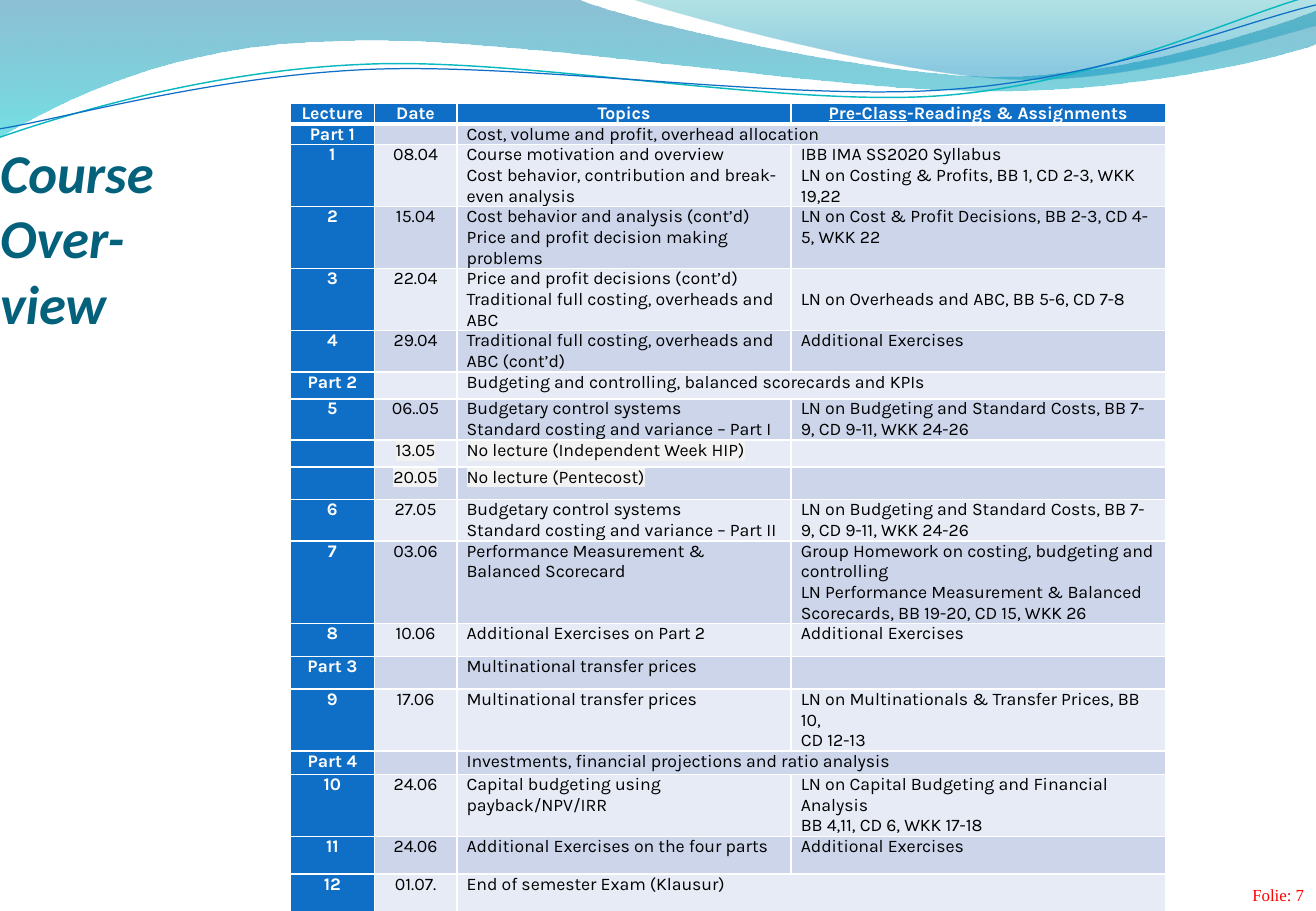
from lxml.etree import SubElement
from pptx import Presentation
from pptx.dml.color import RGBColor
from pptx.enum.text import MSO_ANCHOR, MSO_AUTO_SIZE, PP_ALIGN
from pptx.oxml.ns import qn
from pptx.util import Emu, Inches, Pt

BLUE, WHITE, BLACK = "0F6FC6", "FFFFFF", "000000"
BANDS = ("E7EBF5", "CCD5EA")
NO_LECTURE = "F2F2F2"
COLUMN_WIDTHS = (0.69, 0.68, 2.75, 3.08)

# Row height in inches, then lecture, date, topics, readings
SCHEDULE = [
    (0.17, "Lecture", "Date", "Topics", "Pre-Class-Readings & Assignments"),
    (0.17, "Part 1", "", "Cost, volume and profit, overhead allocation", None),
    (0.51, "1", "08.04", "Course motivation and overview\nCost behavior, contribution and break-even analysis",
     "IBB IMA SS2020 Syllabus\nLN on Costing & Profits, BB 1, CD 2-3, WKK 19,22"),
    (0.51, "2", "15.04", "Cost behavior and analysis (cont’d)\nPrice and profit decision making problems",
     "LN on Cost & Profit Decisions, BB 2-3, CD 4-5, WKK 22"),
    (0.51, "3", "22.04", "Price and profit decisions (cont’d)\nTraditional full costing, overheads and ABC",
     "LN on Overheads and ABC, BB 5-6, CD 7-8"),
    (0.34, "4", "29.04", "Traditional full costing, overheads and ABC (cont’d)", "Additional Exercises"),
    (0.22, "Part 2", "", "Budgeting and controlling, balanced scorecards and KPIs", None),
    (0.34, "5", "06..05", "Budgetary control systems\nStandard costing and variance – Part I",
     "LN on Budgeting and Standard Costs, BB 7-9, CD 9-11, WKK 24-26"),
    (0.22, "", "13.05", "No lecture (Independent Week HIP)", ""),
    (0.27, "", "20.05", "No lecture (Pentecost)", ""),
    (0.34, "6", "27.05", "Budgetary control systems\nStandard costing and variance – Part II",
     "LN on Budgeting and Standard Costs, BB 7-9, CD 9-11, WKK 24-26"),
    (0.68, "7", "03.06", "Performance Measurement & Balanced Scorecard",
     "Group Homework on costing, budgeting and controlling\n"
     "LN Performance Measurement & Balanced Scorecards, BB 19-20, CD 15, WKK 26"),
    (0.27, "8", "10.06", "Additional Exercises on Part 2", "Additional Exercises"),
    (0.27, "Part 3", "", "Multinational transfer prices", ""),
    (0.51, "9", "17.06", "Multinational transfer prices",
     "LN on Multinationals & Transfer Prices, BB 10,\nCD 12-13"),
    (0.19, "Part 4", "", "Investments, financial projections and ratio analysis", None),
    (0.51, "10", "24.06", "Capital budgeting using payback/NPV/IRR",
     "LN on Capital Budgeting and Financial Analysis\nBB 4,11, CD 6, WKK 17-18"),
    (0.31, "11", "24.06", "Additional Exercises on the four parts", "Additional Exercises"),
    (0.31, "12", "01.07.", "End of semester Exam (Klausur)", None),
]

# Wave outlines: start point, then cubic curves (6 numbers) or straight lines (2)
UPPER_WAVE = [(0, 0), (4.77, 0), (5.15, 0.17, 7.19, 0.63, 8.22, 0.63), (9.24, 0.63, 10.38, 0.26, 10.83, 0.09),
              (10.84, 0.36), (10.65, 0.44, 9.42, 0.76, 8.08, 0.75), (6.74, 0.75, 4.14, 0.28, 2.79, 0.34),
              (1.4, 0.36, 0.5, 0.83, -0.01, 1.13)]
RIGHT_WAVE = [(5.19, -0.01), (5.52, 0.11, 7.39, 0.62, 8.33, 0.65), (9.27, 0.69, 10.42, 0.32, 10.83, 0.21),
              (10.83, 0)]
TEAL_CURVE = [(0, 1.13), (0.52, 0.95, 1.71, 0.58, 3, 0.53), (4.28, 0.47, 6.42, 0.88, 7.72, 0.79),
              (9.02, 0.7, 10.17, 0.13, 10.81, -0.04)]
BLUE_CURVE = [(0, 1.06), (0.51, 0.98, 1.77, 0.62, 3.07, 0.57), (4.36, 0.52, 6.47, 0.83, 7.76, 0.74),
              (9.06, 0.66, 10.2, 0.19, 10.83, 0.04)]


def rgb(value):
    return RGBColor.from_string(value)


def set_font(font, name, size, color, bold=False, italic=False):
    font.name, font.size, font.bold, font.italic = name, Pt(size), bold, italic
    font.color.rgb = rgb(color)


def add_outline(slide, left, top, outline, closed):
    points = [(left + Inches(part[i]), top + Inches(part[i + 1]))
              for part in outline for i in range(0, len(part), 2)]
    builder = slide.shapes.build_freeform(*points[0])
    builder.add_line_segments(points[1:], close=closed)
    shape = builder.convert_to_shape()
    shape.shadow.inherit = False
    # Join each three segments of a curve into one cubic segment
    segments = iter(list(shape._element.iter(qn("a:lnTo"))))
    for part in outline[1:]:
        first = next(segments)
        if len(part) == 6:
            first.tag = qn("a:cubicBezTo")
            for segment in (next(segments), next(segments)):
                first.append(segment[0])
                segment.getparent().remove(segment)
    return shape


def add_waves(slide, left, top):
    # Translucent gradient bands
    for outline, stops in ((UPPER_WAVE, ((0, "0074A1", 45), (1, "00C6CF", 55))),
                           (RIGHT_WAVE, ((0, "00A1A9", 30), (0.8, "008BBF", 45)))):
        band = add_outline(slide, left, top, outline, True)
        band.line.fill.background()
        band.fill.gradient()
        band.fill.gradient_angle = 270
        for stop, (position, color, _) in zip(band.fill.gradient_stops, stops):
            stop.position = position
            stop.color.rgb = rgb(color)
        for tint, (_, _, opacity) in zip(band._element.spPr.iter(qn("a:srgbClr")), stops):
            SubElement(tint, qn("a:alpha"), val=str(opacity * 1000))
    # Thin curves
    for outline, color, width in ((TEAL_CURVE, "0AB8BF", 0.85), (BLUE_CURVE, BLUE, 0.75)):
        curve = add_outline(slide, left, top, outline, False)
        curve.fill.background()
        curve.line.color.rgb = rgb(color)
        curve.line.width = Pt(width)


def add_title(slide, left, top, width, height):
    title = slide.shapes.title
    title.left, title.top, title.width, title.height = left, top, width, height
    frame = title.text_frame
    frame.auto_size = MSO_AUTO_SIZE.NONE
    frame.vertical_anchor = MSO_ANCHOR.BOTTOM
    frame.margin_left = frame.margin_right = frame.margin_bottom = 0
    heading = frame.paragraphs[0]
    heading.text = "Course\nOver-\nview"
    heading.alignment = PP_ALIGN.LEFT
    set_font(heading.font, "Calibri", 32.4, "04617B", bold=True, italic=True)


def add_borders(cell, row):
    widths = {"lnL": 1, "lnR": 1, "lnT": 3 if row == 1 else 1, "lnB": 3 if row == 0 else 1}
    for side, width in widths.items():
        border = SubElement(cell._tc.get_or_add_tcPr(), qn(f"a:{side}"), w=str(Pt(width)))
        SubElement(SubElement(border, qn("a:solidFill")), qn("a:srgbClr"), val=WHITE)


def fill_cell(cell, row, column, text, highlighted):
    strong = row == 0 or column == 0
    cell.margin_left = cell.margin_right = Inches(0.08)
    cell.margin_top = cell.margin_bottom = 0
    add_borders(cell, row)
    cell.fill.solid()
    cell.fill.fore_color.rgb = rgb(BLUE if strong else BANDS[row % 2])
    cell.text = text or ""
    for paragraph in cell.text_frame.paragraphs:
        paragraph.alignment = PP_ALIGN.CENTER if row == 0 or column < 2 else PP_ALIGN.LEFT
        set_font(paragraph.font, "Karla", 10.5, WHITE if strong else BLACK, bold=strong)
        if not text:
            SubElement(paragraph._p, qn("a:endParaRPr"), sz="1050")
        for run in paragraph.runs if highlighted else ():
            highlight = SubElement(run._r.get_or_add_rPr(), qn("a:highlight"))
            SubElement(highlight, qn("a:srgbClr"), val=NO_LECTURE)


def add_schedule(slide, left, top):
    width = Inches(sum(COLUMN_WIDTHS))
    height = Inches(sum(entry[0] for entry in SCHEDULE))
    table = slide.shapes.add_table(len(SCHEDULE), len(COLUMN_WIDTHS), left, top, width, height).table
    table.first_row = table.horz_banding = False
    for column, column_width in zip(table.columns, COLUMN_WIDTHS):
        column.width = Inches(column_width)
    for row, (row_height, *texts) in enumerate(SCHEDULE):
        table.rows[row].height = Inches(row_height)
        for column, text in enumerate(texts):
            fill_cell(table.cell(row, column), row, column, text, texts[2].startswith("No lecture"))
        if texts[3] is None:
            table.cell(row, 2).merge(table.cell(row, 3))
    # Underlined start of the readings heading
    readings = table.cell(0, 3).text_frame.paragraphs[0]
    readings.runs[0].text = "Pre-Class"
    readings.runs[0].font.underline = True
    readings.add_run().text = "-Readings & Assignments"
    # Lecture 3 readings stand level with the second topic line
    table.cell(4, 3).margin_top = Inches(0.17)


def add_page_number(slide, left, top, width, height):
    frame = slide.shapes.add_textbox(left, top, width, height).text_frame
    frame.word_wrap = True
    number = frame.paragraphs[0]
    number.text = "Folie: 7"
    number.alignment = PP_ALIGN.RIGHT
    set_font(number.font, "Times New Roman", 10, "FF0000")


def main():
    deck = Presentation()
    deck.slide_width, deck.slide_height = Inches(10.83), Inches(7.5)
    slide = deck.slides.add_slide(deck.slide_layouts[5])
    add_waves(slide, Emu(0), Emu(0))
    add_title(slide, Inches(0), Inches(1.06), Inches(9.75), Inches(1.7))
    add_schedule(slide, Inches(2.39), Inches(0.85))
    add_page_number(slide, Inches(7.31), Inches(7.23), Inches(3.52), Inches(0.27))
    deck.save("out.pptx")


if __name__ == "__main__":
    main()
